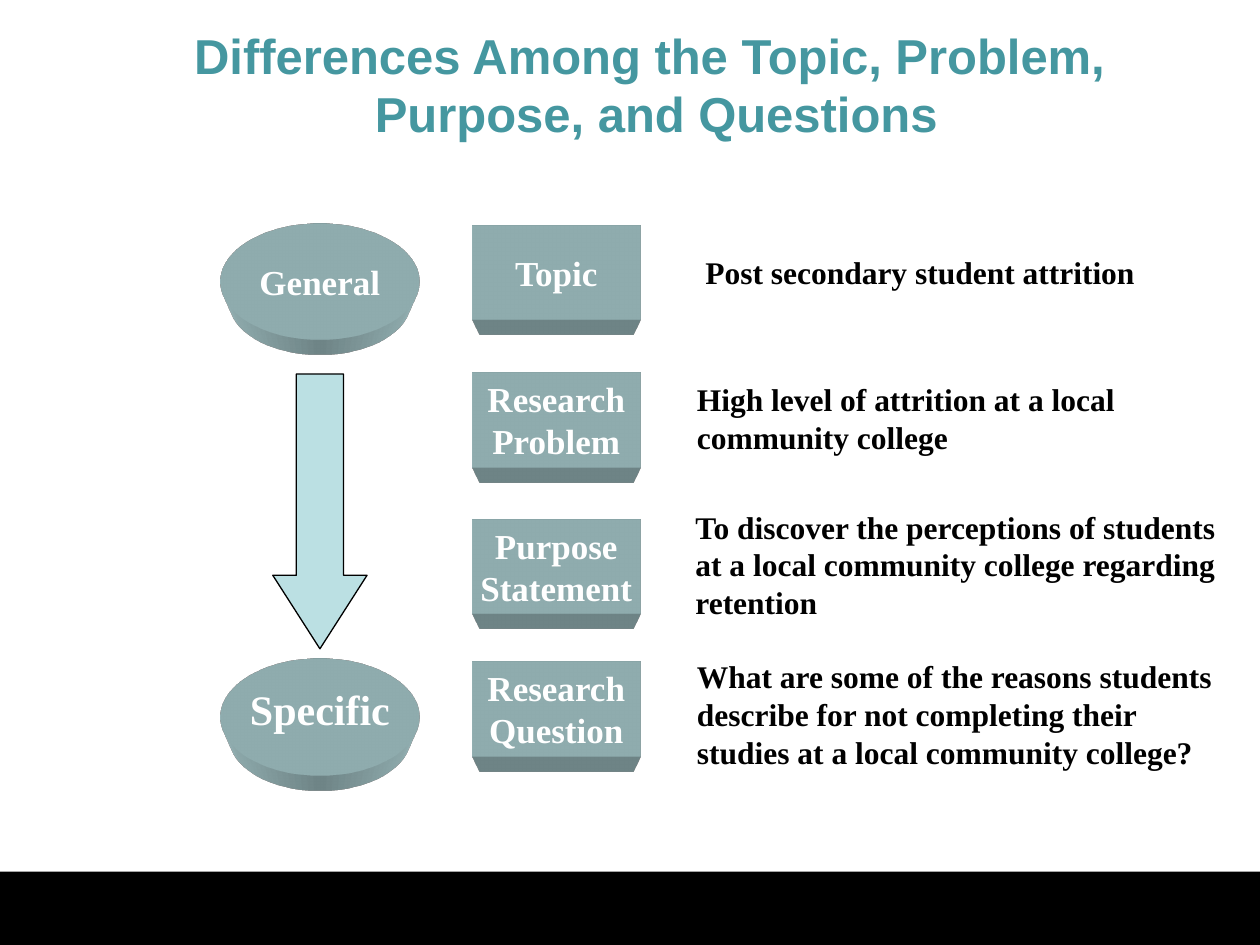
from lxml import etree
from pptx import Presentation
from pptx.dml.color import RGBColor
from pptx.enum import shapes, text
from pptx.util import Cm, Pt

BLACK = RGBColor(0x00, 0x00, 0x00)
WHITE = RGBColor(0xFF, 0xFF, 0xFF)
TEAL = RGBColor(0x45, 0x97, 0xA0)
PALE = RGBColor(0xBB, 0xE0, 0xE3)
SERIF = "Times New Roman"
SHAPE = shapes.MSO_SHAPE
CENTER = text.PP_ALIGN.CENTER
MIDDLE = text.MSO_ANCHOR.MIDDLE
A = "http://schemas.openxmlformats.org/drawingml/2006/main"
DEPTH = f"""<a:x xmlns:a="{A}">
<a:scene3d><a:camera prst="legacyPerspectiveBottom"/>
<a:lightRig rig="legacyFlat3" dir="t"/></a:scene3d>
<a:sp3d extrusionH="887400" prstMaterial="legacyMatte">
<a:bevelT w="13500" h="13500" prst="angle"/>
<a:bevelB w="13500" h="13500" prst="angle"/>
<a:extrusionClr><a:srgbClr val="{PALE}"/></a:extrusionClr></a:sp3d></a:x>"""

# label lines, box top, then the example's left, top, width and height (cm)
LEVELS = [
    ("Topic", 4.54, "Post secondary student attrition",
     (13.97, 4.98, 9.47, 1.12)),
    ("Research\nProblem", 7.51,
     "High level of attrition at a local community college",
     (13.8, 7.54, 9.25, 1.88)),
    ("Purpose\nStatement", 10.47,
     "To discover the perceptions of students at a local community college "
     "regarding retention", (13.77, 10.11, 11.23, 2.64)),
    ("Research\nQuestion", 13.34,
     "What are some of the reasons students describe for not completing their "
     "studies at a local community college?", (13.8, 13.13, 11.2, 2.64)),
]


def write(sp, words, size, color, align=None, name=SERIF, wrap=False):
    tf = sp.text_frame
    tf.text = words
    tf.word_wrap = wrap
    for p in tf.paragraphs:
        p.alignment = align
        p.font.size, p.font.name, p.font.bold = Pt(size), name, True
        p.font.color.rgb = color
    return tf


def add_solid(slide, kind, box, fill, depth=False):
    """Add a filled shape without outline, extruded downwards if depth."""
    sp = slide.shapes.add_shape(kind, *map(Cm, box))
    sp.shadow.inherit = False
    sp.fill.solid()
    sp.fill.fore_color.rgb = fill
    sp.line.fill.background()
    if depth:
        sp._element.spPr.extend(list(etree.fromstring(DEPTH)))
    return sp


def add_text(slide, box, words, size, color, wrap=True):
    sp = slide.shapes.add_textbox(*map(Cm, box))
    write(sp, words, size, color, wrap=wrap)


def add_title(slide, box):
    sp = slide.shapes.title
    sp.left, sp.top, sp.width, sp.height = map(Cm, box)
    tf = write(sp, "Differences Among the Topic, Problem, \vPurpose, and Questions",
               28, TEAL, CENTER, "Arial", True)
    tf.vertical_anchor = MIDDLE


def add_scale(slide, left, top, width, height):
    """Draw the arrow leading from the general down to the specific."""
    oval_h = 2.34
    bottom = top + height - oval_h
    general = add_solid(slide, SHAPE.OVAL, (left, top, width, oval_h), PALE, True)
    write(general, "General", 20, WHITE, CENTER).vertical_anchor = MIDDLE
    add_solid(slide, SHAPE.OVAL, (left, bottom, width, oval_h), PALE, True)
    add_text(slide, (left + 0.35, bottom + 0.38, 3.33, 1.27), "Specific", 24, WHITE,
             wrap=False)
    arrow_w = 1.9
    arrow = add_solid(slide, SHAPE.DOWN_ARROW,
                      (left + (width - arrow_w) / 2, top + 3.04, arrow_w, 5.54), PALE)
    arrow.adjustments[0], arrow.adjustments[1] = 0.5, 0.78
    arrow.line.color.rgb = BLACK
    arrow.line.width = Pt(0.75)


def add_levels(slide, left, width, height):
    for label, top, example, example_box in LEVELS:
        sp = add_solid(slide, SHAPE.RECTANGLE, (left, top, width, height), PALE, True)
        write(sp, label, 20, WHITE, CENTER).vertical_anchor = MIDDLE
        add_text(slide, example_box, example, 18, BLACK)


def main():
    prs = Presentation()
    prs.slide_width, prs.slide_height = Cm(25.4), Cm(19.05)
    slide = prs.slides.add_slide(prs.slide_layouts[5])
    add_solid(slide, SHAPE.RECTANGLE, (0, 17.57, 25.4, 1.48), BLACK)
    add_title(slide, (2.12, 0.42, 22.22, 2.54))
    add_scale(slide, 4.44, 4.5, 4.02, 11.12)
    add_levels(slide, 9.52, 3.39, 1.9)
    prs.save("out.pptx")


if __name__ == "__main__":
    main()
